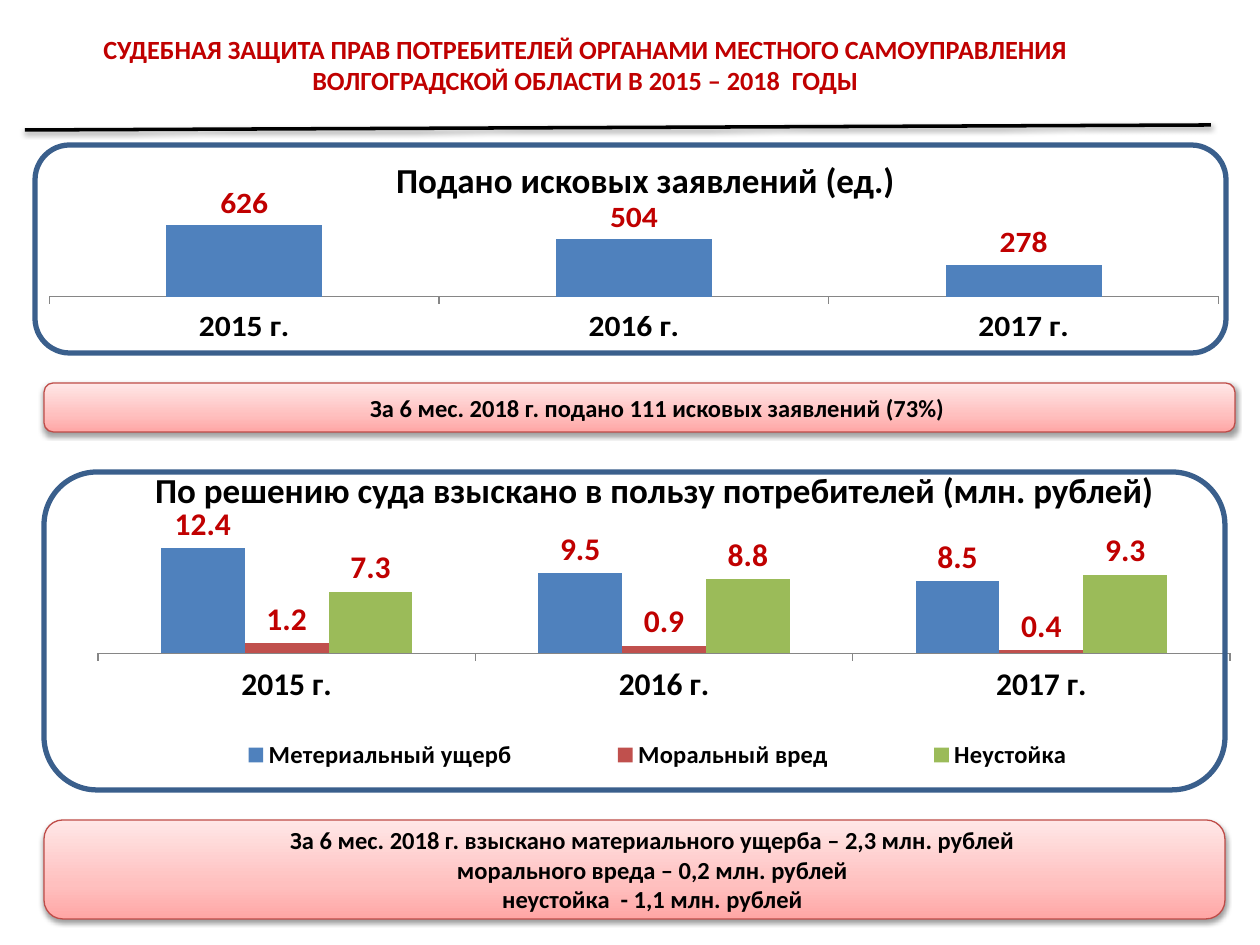
from lxml import etree
from pptx import Presentation
from pptx.chart.data import CategoryChartData
from pptx.dml.color import RGBColor
from pptx.enum.chart import XL_CHART_TYPE, XL_LABEL_POSITION, XL_LEGEND_POSITION, XL_TICK_MARK
from pptx.enum.shapes import MSO_CONNECTOR, MSO_SHAPE
from pptx.enum.text import MSO_ANCHOR, PP_ALIGN
from pptx.oxml import parse_xml
from pptx.oxml.ns import nsdecls, qn
from pptx.util import Pt

COLUMNS = XL_CHART_TYPE.COLUMN_CLUSTERED
OUTSIDE_END = XL_LABEL_POSITION.OUTSIDE_END
LEGEND_RIGHT = XL_LEGEND_POSITION.RIGHT
TICK_OUT, TICK_NONE = XL_TICK_MARK.OUTSIDE, XL_TICK_MARK.NONE
STRAIGHT = MSO_CONNECTOR.STRAIGHT
ROUNDED = MSO_SHAPE.ROUNDED_RECTANGLE
MIDDLE, TOP = MSO_ANCHOR.MIDDLE, MSO_ANCHOR.TOP
CENTER = PP_ALIGN.CENTER

FONT = "Calibri"
BLACK = RGBColor(0, 0, 0)
DARK_RED = RGBColor(0xC0, 0, 0)
FRAME_BLUE = RGBColor(0x3A, 0x5F, 0x8C)
CALLOUT_LINE = RGBColor(0xBF, 0x4C, 0x48)
AXIS_GRAY = RGBColor(0x86, 0x86, 0x86)
BLUE = RGBColor(0x4F, 0x81, 0xBD)
RED = RGBColor(0xC0, 0x50, 0x4D)
GREEN = RGBColor(0x9B, 0xBB, 0x59)
CALLOUT_STOPS = [(0, RGBColor(0xFF, 0xA6, 0xA5)), (35, RGBColor(0xFF, 0xC0, 0xBF)),
                 (100, RGBColor(0xFF, 0xE7, 0xE7))]
YEARS = ["2015 г.", "2016 г.", "2017 г."]
FIRST_INDENT = 36


def px(length):
    return round(length * 914400 / 126)


def area(box):
    return [px(length) for length in box]


def style_font(font, size, color=BLACK):
    font.name, font.size, font.bold = FONT, Pt(size), True
    font.color.rgb = color


def write_lines(frame, lines, size, color=BLACK, anchor=TOP, indent=0):
    frame.word_wrap = True
    frame.vertical_anchor = anchor
    for number, line in enumerate(lines):
        para = frame.add_paragraph() if number else frame.paragraphs[0]
        para.alignment = CENTER
        if indent:
            para._p.get_or_add_pPr().set("indent", str(px(indent)))
        span = para.add_run()
        span.text = line
        style_font(span.font, size, color)


def add_shadow(shape):
    properties = shape._element.spPr
    for old in properties.findall(qn("a:effectLst")):
        properties.remove(old)
    properties.append(parse_xml(
        f'<a:effectLst {nsdecls("a")}><a:outerShdw blurRad="40000" dist="20000" dir="5400000" '
        'rotWithShape="0"><a:srgbClr val="000000"><a:alpha val="38000"/></a:srgbClr>'
        '</a:outerShdw></a:effectLst>'))


def add_heading(page, box, text, size, color=BLACK):
    write_lines(page.shapes.add_textbox(*area(box)).text_frame, [text], size, color)


def add_rule(page, start, end):
    rule = page.shapes.add_connector(STRAIGHT, *area(start + end))
    rule.line.color.rgb = BLACK
    rule.line.width = Pt(2)
    add_shadow(rule)


def add_frame(page, box):
    frame = page.shapes.add_shape(ROUNDED, *area(box))
    frame.shadow.inherit = False
    frame.fill.background()
    frame.line.color.rgb = FRAME_BLUE
    frame.line.width = Pt(3)


def add_callout(page, box, lines):
    callout = page.shapes.add_shape(ROUNDED, *area(box))
    callout.adjustments[0] = 0.19
    callout.line.color.rgb = CALLOUT_LINE
    callout.line.width = Pt(0.75)
    stops = "".join(f'<a:gs pos="{place * 1000}"><a:srgbClr val="{color}"/></a:gs>'
                    for place, color in CALLOUT_STOPS)
    callout._element.spPr.find(qn("a:prstGeom")).addnext(parse_xml(
        f'<a:gradFill {nsdecls("a")} rotWithShape="1"><a:gsLst>{stops}</a:gsLst>'
        '<a:lin ang="16200000" scaled="0"/></a:gradFill>'))
    add_shadow(callout)
    write_lines(callout.text_frame, lines, 14, anchor=MIDDLE, indent=FIRST_INDENT)


def set_layout(parent, fractions, inner=False):
    """Place a plot area or legend by fractions of its chart."""
    for old in parent.findall(qn("c:layout")):
        parent.remove(old)
    layout = etree.Element(qn("c:layout"))
    manual = etree.SubElement(layout, qn("c:manualLayout"))
    settings = [("layoutTarget", "inner")] if inner else []
    settings += [("xMode", "edge"), ("yMode", "edge")] + list(zip("xywh", fractions))
    for name, value in settings:
        etree.SubElement(manual, qn(f"c:{name}")).set("val", str(value))
    if inner:
        parent.insert(0, layout)
    else:
        parent.find(qn("c:legendPos")).addnext(layout)


def add_columns(page, box, series, top_value, plot, legend=None):
    data = CategoryChartData()
    data.categories = YEARS
    for name, values, _ in series:
        data.add_series(name, values)
    chart = page.shapes.add_chart(COLUMNS, *area(box), data).chart
    style_font(chart.font, 18)
    chart.has_title = False
    chart.has_legend = legend is not None
    if legend:
        chart.legend.position = LEGEND_RIGHT
        chart.legend.include_in_layout = False
        style_font(chart.legend.font, 14)
        set_layout(chart.legend._element, legend)

    # Axes
    values_axis = chart.value_axis
    values_axis.visible = False
    values_axis.has_major_gridlines = False
    values_axis.minimum_scale, values_axis.maximum_scale = 0, top_value
    years_axis = chart.category_axis
    years_axis.major_tick_mark, years_axis.minor_tick_mark = TICK_OUT, TICK_NONE
    years_axis.format.line.color.rgb = AXIS_GRAY
    style_font(years_axis.tick_labels.font, 18)

    # Columns and their values
    columns = chart.plots[0]
    columns.gap_width, columns.overlap = 150, 0
    columns.vary_by_categories = False
    for column, (_, _, color) in zip(columns.series, series):
        column.format.fill.solid()
        column.format.fill.fore_color.rgb = color
        labels = column.data_labels
        labels.show_value = True
        labels.position = OUTSIDE_END
        style_font(labels.font, 18, DARK_RED)
    set_layout(chart._chartSpace.chart.plotArea, plot, inner=True)


def main():
    deck = Presentation()
    deck.slide_width, deck.slide_height = px(1260), px(945)
    page = deck.slides.add_slide(deck.slide_layouts[6])

    # Recovered sums
    add_heading(page, (49, 462, 1211, 55),
                "По решению суда взыскано в пользу потребителей (млн. рублей)", 20)
    add_columns(page, (67, 503, 1193, 277),
                [("Метериальный ущерб", (12.4, 9.5, 8.5), BLUE),
                 ("Моральный вред", (1.2, 0.9, 0.4), RED),
                 ("Неустойка", (7.3, 8.8, 9.3), GREEN)],
                14, (0.026, 0.115, 0.949, 0.428), (0.07, 0.84, 0.85, 0.14))

    # Filed claims
    add_columns(page, (25, 185, 1218, 159), [("Series 1", (626, 504, 278), BLUE)],
                700, (0.02, 0.17, 0.96, 0.54))
    add_heading(page, (217, 152, 857, 55), "Подано исковых заявлений (ед.)", 20)

    add_frame(page, (35, 145, 1191, 208))
    add_frame(page, (44, 472, 1181, 318))

    # Page title
    add_rule(page, (25, 130), (1211, 125))
    add_heading(page, (25, 27, 1121, 77),
                "СУДЕБНАЯ ЗАЩИТА ПРАВ ПОТРЕБИТЕЛЕЙ ОРГАНАМИ МЕСТНОГО САМОУПРАВЛЕНИЯ "
                "ВОЛГОГРАДСКОЙ ОБЛАСТИ В 2015 – 2018  ГОДЫ", 15, DARK_RED)

    # Half-year results
    add_callout(page, (44, 383, 1191, 49),
                ["За 6 мес. 2018 г. подано 111 исковых заявлений (73%)"])
    add_callout(page, (44, 820, 1181, 99),
                ["За 6 мес. 2018 г. взыскано материального ущерба – 2,3 млн. рублей",
                 "морального вреда – 0,2 млн. рублей",
                 "неустойка  - 1,1 млн. рублей"])
    deck.save("out.pptx")


if __name__ == "__main__":
    main()
